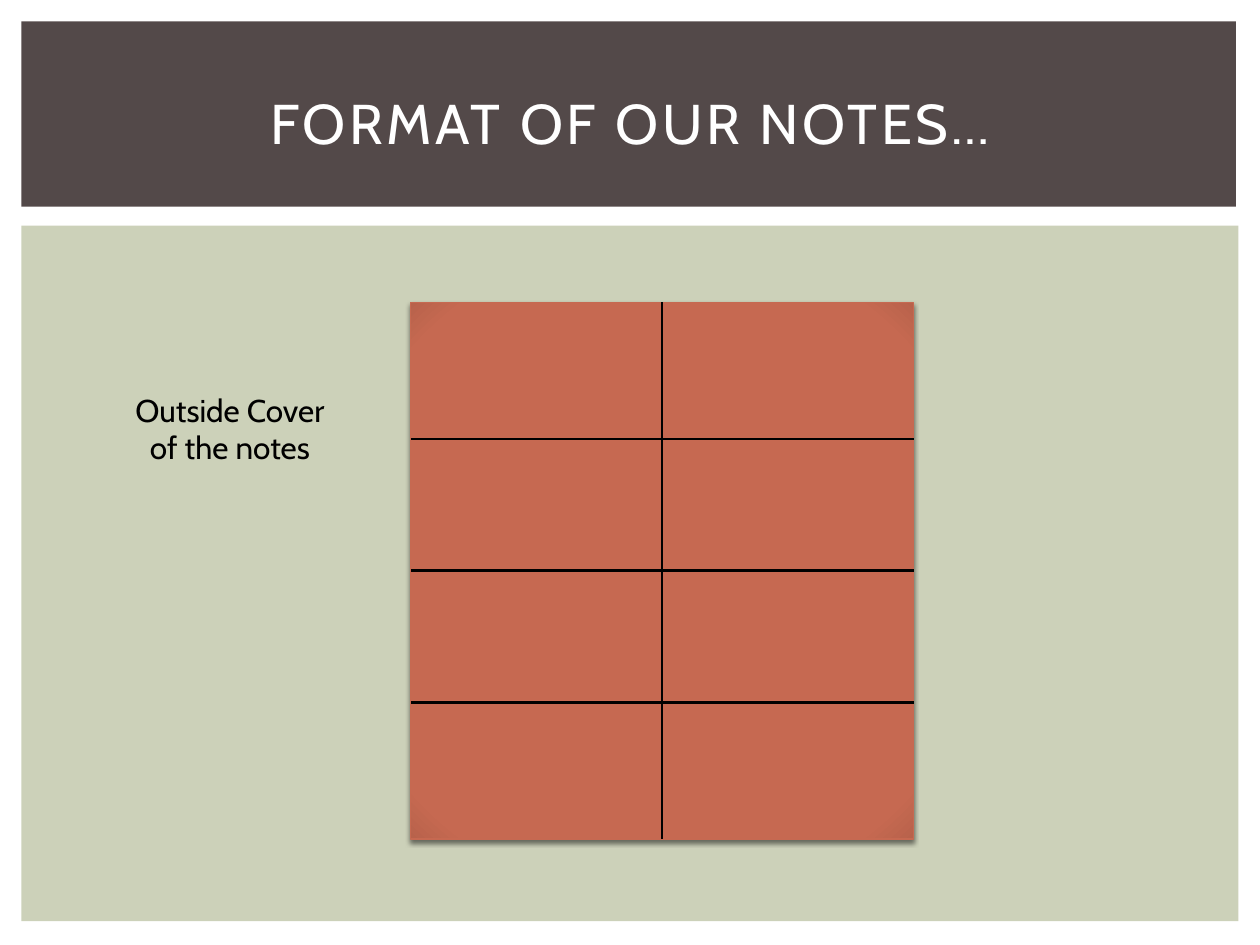
import dataclasses

import lxml.etree
import pptx
import pptx.dml.color
import pptx.enum.shapes
import pptx.enum.text
import pptx.oxml
import pptx.oxml.ns
import pptx.util

COLUMNS, ROWS = 1000, 750
CELL = pptx.util.Inches(0.01)


@dataclasses.dataclass(frozen=True)
class Theme:
    """Colours, font and type sizes of the deck."""

    font: str = "Cabin"
    title_size: int = 32
    label_size: int = 18
    band: str = "534949"
    panel: str = "CCD1B9"
    sheet: str = "C66951"
    sheet_corner: str = "B8624B"
    light: str = "FFFFFF"
    dark: str = "000000"
    fold_width: float = 1.5
    outline_width: float = 0.79


@dataclasses.dataclass(frozen=True)
class Box:
    """A rectangle measured in grid columns and rows."""

    left: float
    top: float
    width: float
    height: float

    def inside(self, left, top, width, height):
        """Return a box offset from this one's corner."""
        return Box(self.left + left, self.top + top, width, height)

    def emu(self):
        """Return left, top, width and height as slide lengths."""
        return [round(side * CELL) for side in dataclasses.astuple(self)]


THEME = Theme()


def colour(code):
    """Turn a hex code into a colour."""
    return pptx.dml.color.RGBColor.from_string(code)


def apply(target, values):
    """Set each attribute of the target from a dict."""
    for name, value in values.items():
        setattr(target, name, value)


def add_rectangle(shapes, box, fill):
    """Add a plain filled rectangle without line or shadow."""
    shape = shapes.add_shape(pptx.enum.shapes.MSO_SHAPE.RECTANGLE, *box.emu())
    shape.shadow.inherit = False
    shape.fill.solid()
    shape.fill.fore_color.rgb = colour(fill)
    shape.line.fill.background()
    return shape


def write(shape, text, size, ink, anchor):
    """Write one centred paragraph and return its run."""
    frame = shape.text_frame
    apply(frame, {
        "word_wrap": True,
        "auto_size": pptx.enum.text.MSO_AUTO_SIZE.NONE,
        "vertical_anchor": anchor,
    })
    para = frame.paragraphs[0]
    para.alignment = pptx.enum.text.PP_ALIGN.CENTER
    span = para.add_run()
    span.text = text
    apply(span.font, {"name": THEME.font, "size": pptx.util.Pt(size)})
    span.font.color.rgb = colour(ink)
    return span


def add_heading(page, box):
    """Place the dark band and the title on it."""
    title = page.shapes.title
    band = add_rectangle(page.shapes, box, THEME.band)
    title.element.addprevious(band.element)
    sides = box.inside(25, 22, 917, 115).emu()
    apply(title, dict(zip(("left", "top", "width", "height"), sides)))
    span = write(title, "FORMAT OF OUR NOTES…", THEME.title_size, THEME.light,
                 pptx.enum.text.MSO_ANCHOR.MIDDLE)
    span.font.element.set("spc", "200") if hasattr(span.font, "element") else \
        span.font._element.set("spc", "200") if hasattr(span.font, "_element") else \
        span._r.get_or_add_rPr().set("spc", "200")


def shade_sheet(sheet):
    """Give the sheet darker corners, a thin outline and a soft shadow."""
    space = pptx.oxml.ns.nsdecls("a")
    stops = "".join(
        f'<a:gs pos="{share * 1000}"><a:srgbClr val="{code}"/></a:gs>'
        for share, code in ((0, THEME.sheet), (90, THEME.sheet), (100, THEME.sheet_corner)))
    sheet.fill.gradient()
    properties = sheet.element.spPr
    gradient = properties.find(pptx.oxml.ns.qn("a:gradFill"))
    properties.replace(gradient, pptx.oxml.parse_xml(
        f'<a:gradFill {space} rotWithShape="1"><a:gsLst>{stops}</a:gsLst>'
        '<a:path path="circle"><a:fillToRect l="50000" t="50000" r="50000" b="50000"/>'
        '</a:path></a:gradFill>'))
    sheet.line.color.rgb = colour(THEME.sheet)
    sheet.line.width = pptx.util.Pt(THEME.outline_width)
    properties.find(pptx.oxml.ns.qn("a:effectLst")).append(pptx.oxml.parse_xml(
        f'<a:outerShdw {space} blurRad="{pptx.util.Pt(2.5)}" dist="{pptx.util.Pt(2)}" '
        f'dir="5400000" rotWithShape="0"><a:srgbClr val="{THEME.dark}">'
        '<a:alpha val="50000"/></a:srgbClr></a:outerShdw>'))


def add_fold(shapes, start, end):
    """Add one fold line between two grid points."""
    ends = [round(length * CELL) for length in (*start, *end)]
    fold = shapes.add_connector(pptx.enum.shapes.MSO_CONNECTOR.STRAIGHT, *ends)
    fold.line.color.rgb = colour(THEME.dark)
    fold.line.width = pptx.util.Pt(THEME.fold_width)
    lxml.etree.SubElement(fold.element.spPr, pptx.oxml.ns.qn("a:effectLst"))
    return fold


def add_folded_sheet(page, box):
    """Draw the sheet with three folds across and one down."""
    shapes = page.shapes.add_group_shape().shapes
    sheet = add_rectangle(shapes, box, THEME.sheet)
    shade_sheet(sheet)
    right, bottom = box.left + box.width, box.top + box.height
    middle, centre = box.left + box.width / 2, box.top + box.height / 2
    row_gap = 104.5
    for step in (0, -1, 1):
        level = centre + step * row_gap
        fold = add_fold(shapes, (right, level), (box.left, level))
        if step == 0:
            fold.begin_connect(sheet, 3)
            fold.end_connect(sheet, 1)
    spine = add_fold(shapes, (middle, box.top), (middle, bottom))
    spine.begin_connect(sheet, 0)
    spine.end_connect(sheet, 2)


def add_body(page, box):
    """Place the green panel, its label and the folded sheet."""
    panel = add_rectangle(page.shapes, box, THEME.panel)
    page.shapes.title.element.addprevious(panel.element)
    label = page.shapes.add_textbox(*box.inside(67, 126, 197, 71).emu())
    write(label, "Outside Cover of the notes", THEME.label_size, THEME.dark,
          pptx.enum.text.MSO_ANCHOR.TOP)
    add_folded_sheet(page, box.inside(309, 61, 399, 426))


def main():
    """Build the deck and save it."""
    deck = pptx.Presentation()
    apply(deck, {"slide_width": COLUMNS * CELL, "slide_height": ROWS * CELL})
    page = deck.slides.add_slide(deck.slide_layouts.get_by_name("Title Only"))
    add_body(page, Box(17, 179, 966, 552))
    add_heading(page, Box(17, 17, 964, 147))
    deck.save("out.pptx")


if __name__ == "__main__":
    main()
